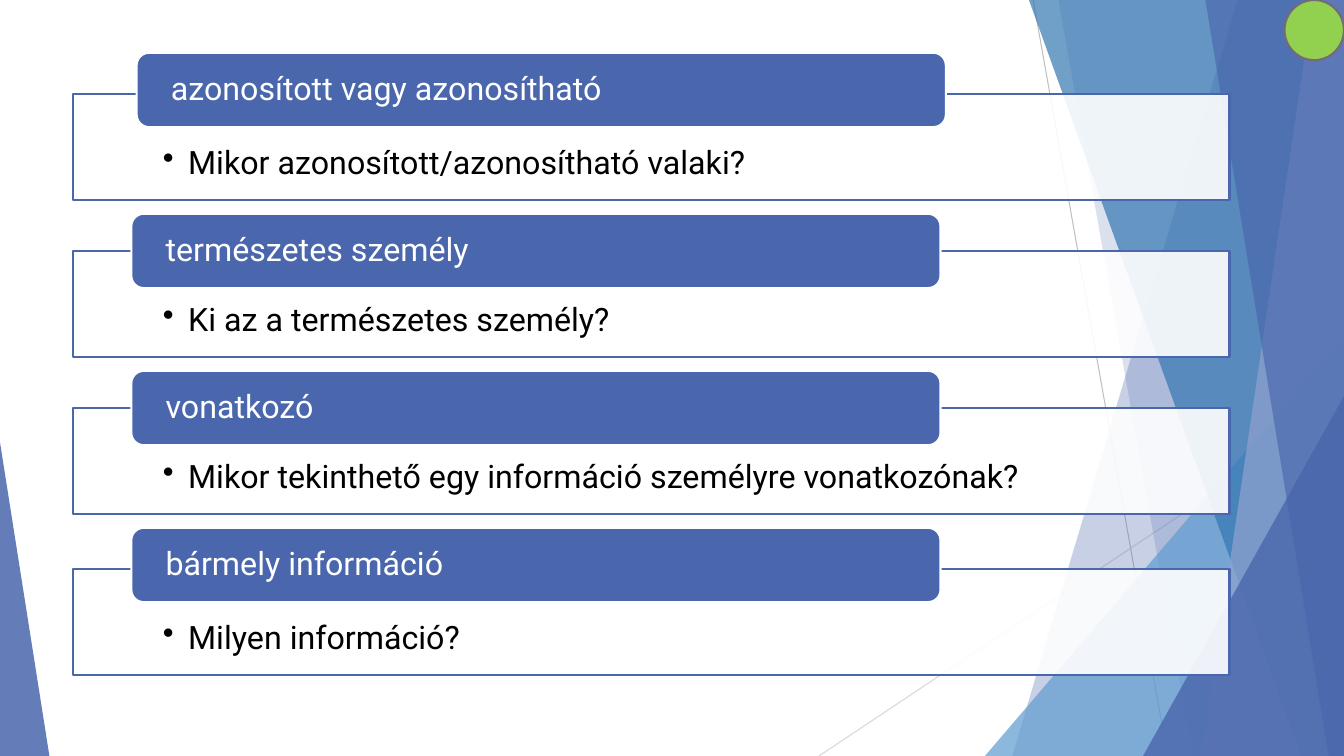
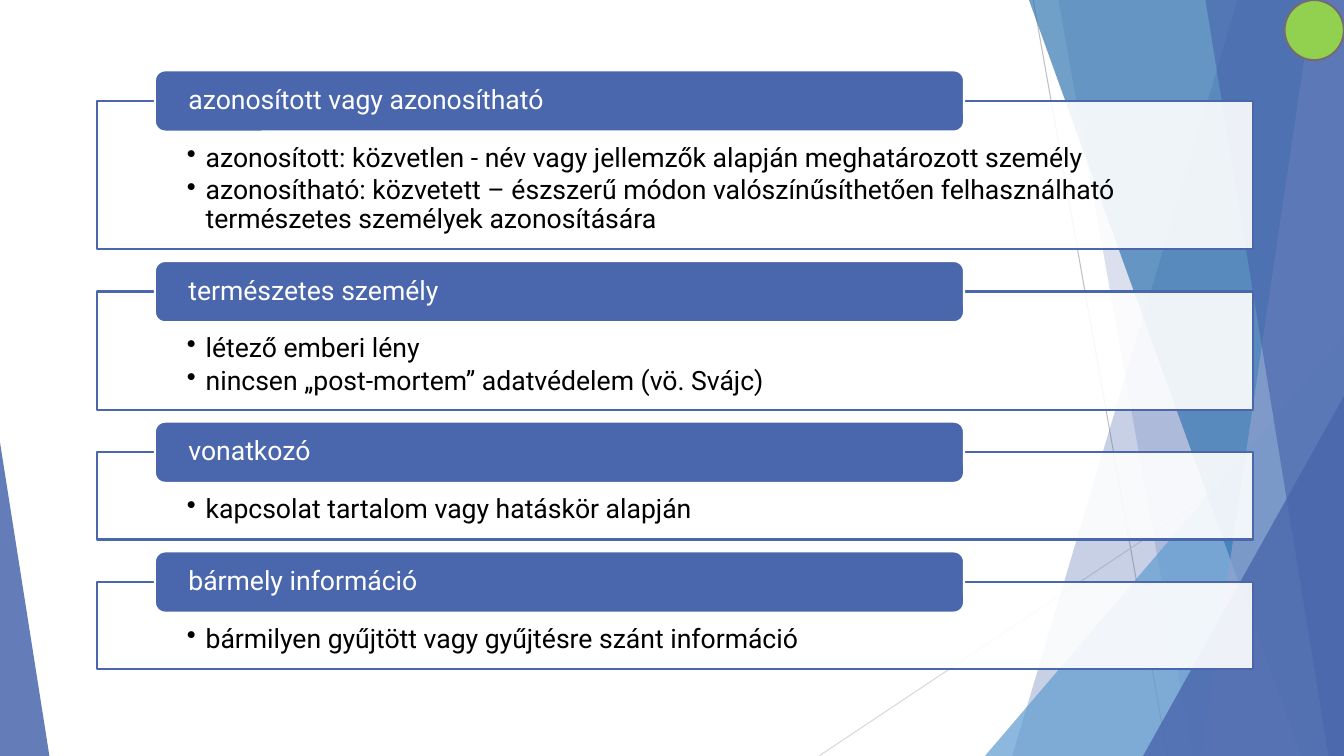
from dataclasses import dataclass

from lxml.etree import SubElement
from pptx import Presentation
from pptx.dml.color import RGBColor
from pptx.enum.shapes import MSO_CONNECTOR, MSO_SHAPE
from pptx.enum.text import MSO_ANCHOR, PP_ALIGN
from pptx.oxml.ns import qn
from pptx.util import Pt

# Shared look
FONT = "Roboto"
WIDTH, HEIGHT = 960, 540
BLUE, SKY, OCEAN, MIST = "4A66AC", "629DD1", "3477B2", "90A2CF"
WHITE, BLACK = "FFFFFF", "000000"
GREEN, GREY = "92D050", "746B76"
PANEL_WIDTH, TAB_WIDTH = 826, 578
PANEL_INSET, TAB_INSET = 64.1, 21.85


@dataclass
class Section:
    caption: str
    bullets: list
    panel_top: float
    panel_height: float
    tab_top: float
    tab_left: float


@dataclass
class Style:
    panel_left: float
    tab_height: float
    size: float
    inset_top: float
    inset_bottom: float
    indent: float


def colour(value):
    return RGBColor.from_string(value)


def paint(shape, fill, opacity=100, line=None):
    """Give a shape its fill, opacity in percent and outline."""
    shape.shadow.inherit = False
    shape.fill.solid()
    shape.fill.fore_color.rgb = colour(fill)
    if opacity < 100:
        solid = shape.element.spPr.find(qn("a:solidFill"))
        SubElement(solid[0], qn("a:alpha"), val=str(opacity * 1000))
    if line:
        shape.line.color.rgb = colour(line)
        shape.line.width = Pt(1.5)
    else:
        shape.line.fill.background()
    return shape


def add_box(page, kind, left, top, width, height, **look):
    box = page.shapes.add_shape(kind, Pt(left), Pt(top), Pt(width), Pt(height))
    return paint(box, **look)


def add_triangle(page, left, top, width, apex, opacity, fill=BLUE):
    """Draw a triangle that stands on the bottom edge of the page."""
    triangle = add_box(page, MSO_SHAPE.ISOSCELES_TRIANGLE, left, top, width,
                       HEIGHT - top, fill=fill, opacity=opacity)
    triangle.adjustments[0] = apex


def add_band(page, top_left, bottom_left, fill, opacity):
    """Draw a slanted band that reaches the right edge of the page."""
    builder = page.shapes.build_freeform(Pt(top_left), 0)
    corners = [(WIDTH, 0), (WIDTH, HEIGHT), (bottom_left, HEIGHT)]
    builder.add_line_segments([(Pt(x), Pt(y)) for x, y in corners])
    paint(builder.convert_to_shape(), fill, opacity)


def add_line(page, start, end, line):
    ends = [Pt(value) for value in (*start, *end)]
    connector = page.shapes.add_connector(MSO_CONNECTOR.STRAIGHT, *ends)
    connector.line.color.rgb = colour(line)
    connector.line.width = Pt(0.75)
    SubElement(connector.element.spPr, qn("a:effectLst"))


def write_text(box, texts, size, color, insets, anchor=MSO_ANCHOR.TOP, indent=0):
    """Fill a box with paragraphs; an indent turns them into bullets."""
    frame = box.text_frame
    frame.word_wrap = True
    frame.vertical_anchor = anchor
    (frame.margin_left, frame.margin_top,
     frame.margin_right, frame.margin_bottom) = [Pt(inset) for inset in insets]
    for index, text in enumerate(texts):
        para = frame.add_paragraph() if index else frame.paragraphs[0]
        para.alignment = PP_ALIGN.LEFT
        para.line_spacing = 0.9
        if indent:
            para.space_after = Pt(round(size * 0.15, 2))
            properties = para._p.get_or_add_pPr()
            properties.set("marL", str(Pt(indent)))
            properties.set("indent", str(-Pt(indent)))
            SubElement(properties, qn("a:buChar"), char="•")
        span = para.add_run()
        span.text = text
        span.font.name = FONT
        span.font.size = Pt(size)
        span.font.color.rgb = colour(color)


def add_backdrop(page, layout):
    """Draw the facets and hand them to the layout that all pages share."""
    add_line(page, (738, 0), (834, HEIGHT), "BFBFBF")
    add_line(page, (WIDTH, 290), (585, HEIGHT), "D9D9D9")
    add_band(page, 884, 723, BLUE, 30)
    add_band(page, 756, 852, BLUE, 20)
    add_triangle(page, 703.5, 240, 256.5, 1, 72, fill=SKY)
    add_band(page, 735, 929.5, OCEAN, 70)
    add_band(page, 938, 858, MIST, 70)
    add_band(page, 861, 949, BLUE, 65)
    add_triangle(page, 816.5, 283, 143.5, 1, 80)
    add_triangle(page, 0, 316, 35.3, 0, 85)
    for shape in list(page.shapes):
        layout.shapes.element.append(shape.element)


def add_section(page, section, style):
    """Draw a bulleted panel with its caption tab on the upper edge."""
    panel = add_box(page, MSO_SHAPE.RECTANGLE, style.panel_left, section.panel_top,
                    PANEL_WIDTH, section.panel_height,
                    fill=WHITE, opacity=90, line=BLUE)
    write_text(panel, section.bullets, size=style.size, color=BLACK,
               insets=(PANEL_INSET, style.inset_top, PANEL_INSET, style.inset_bottom),
               indent=style.indent)
    tab = add_box(page, MSO_SHAPE.ROUNDED_RECTANGLE, section.tab_left, section.tab_top,
                  TAB_WIDTH, style.tab_height, fill=BLUE, line=WHITE)
    write_text(tab, [section.caption], size=style.size, color=WHITE,
               insets=(TAB_INSET, 0, TAB_INSET, 0), anchor=MSO_ANCHOR.MIDDLE)


def fill_page(page, sections, style):
    for section in sections:
        add_section(page, section, style)
    add_box(page, MSO_SHAPE.OVAL, 917.5, 0, 42.5, 43, fill=GREEN, line=GREY)


def question_sections():
    rows = [
        ("azonosított vagy azonosítható", "Mikor azonosított/azonosítható valaki?",
         67, 37.7, 97.6),
        ("természetes személy", "Ki az a természetes személy?", 179.2, 152.7, 93.8),
        ("vonatkozó", "Mikor tekinthető egy információ személyre vonatkozónak?",
         291.4, 264.9, 93.8),
        ("bármely információ", "Milyen információ?", 406.6, 377, 93.8),
    ]
    return [Section(caption, [question], panel_top, 75.6, tab_top, tab_left)
            for caption, question, panel_top, tab_top, tab_left in rows]


def answer_sections():
    rows = [
        ("azonosított vagy azonosítható", 106,
         ["azonosított: közvetlen - név vagy jellemzők alapján meghatározott személy",
          "azonosítható: közvetett – észszerű módon valószínűsíthetően felhasználható "
          "természetes személyek azonosítására"]),
        ("természetes személy", 84.5,
         ["létező emberi lény", "nincsen „post-mortem” adatvédelem (vö. Svájc)"]),
        ("vonatkozó", 62.5, ["kapcsolat tartalom vagy hatáskör alapján"]),
        ("bármely információ", 62.5,
         ["bármilyen gyűjtött vagy gyűjtésre szánt információ"]),
    ]
    sections, top, gap, overhang = [], 72, 30.2, 21.7
    for caption, height, bullets in rows:
        sections.append(Section(caption, bullets, top, height, top - overhang, 110.6))
        top += height + gap
    return sections


def main():
    deck = Presentation()
    deck.slide_width, deck.slide_height = Pt(WIDTH), Pt(HEIGHT)
    layout = deck.slide_layouts[6]

    # Questions
    page = deck.slides.add_slide(layout)
    add_backdrop(page, layout)
    fill_page(page, question_sections(),
              Style(panel_left=52.3, tab_height=53.1, size=23,
                    inset_top=37.5, inset_bottom=12.9, indent=18))

    # Answers
    page = deck.slides.add_slide(layout)
    fill_page(page, answer_sections(),
              Style(panel_left=69.3, tab_height=43.7, size=19,
                    inset_top=31, inset_bottom=10.7, indent=13.5))

    deck.save("out.pptx")


if __name__ == "__main__":
    main()
